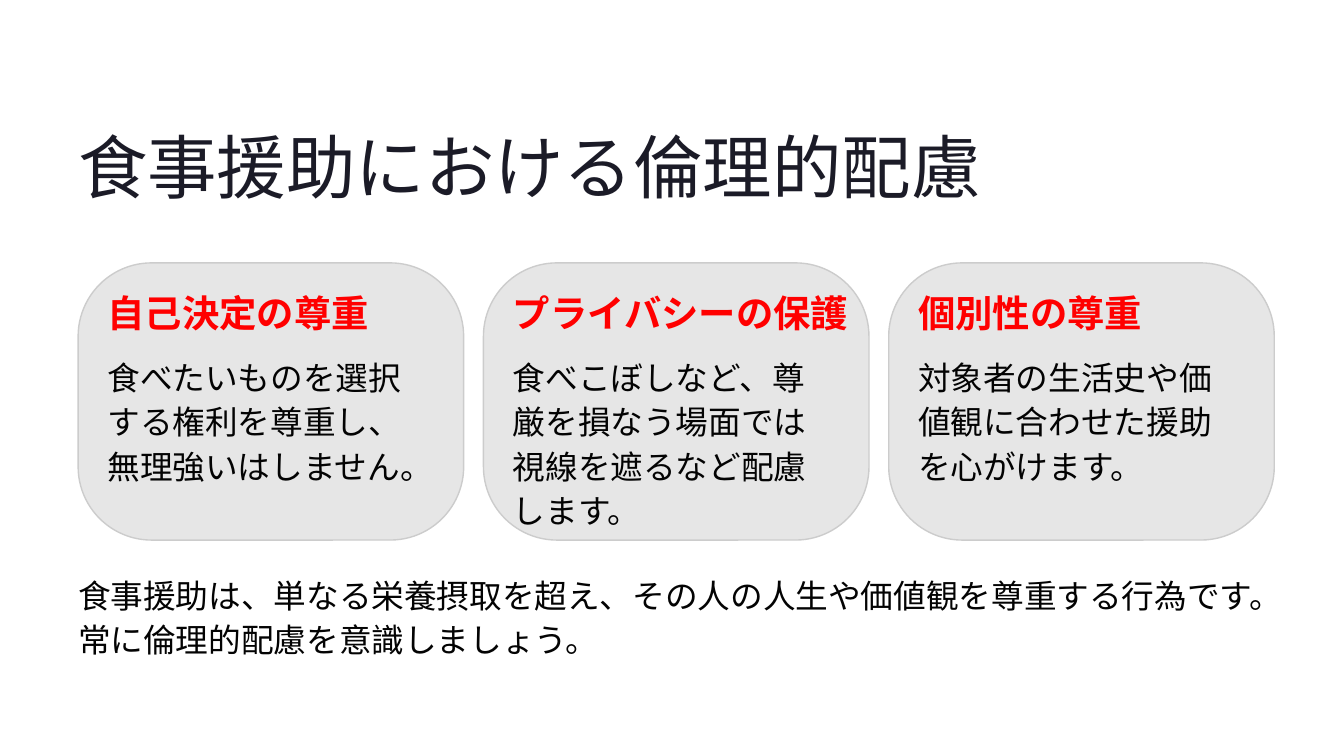
"""Build a slide on ethical care in meal assistance with three principle cards."""
import pptx
import pptx.dml.color
import pptx.enum.shapes
import pptx.util
from dataclasses import dataclass

TITLE = "食事援助における倫理的配慮"
CARDS = [
    ("自己決定の尊重", "食べたいものを選択する権利を尊重し、無理強いはしません。"),
    ("プライバシーの保護", "食べこぼしなど、尊厳を損なう場面では視線を遮るなど配慮します。"),
    ("個別性の尊重", "対象者の生活史や価値観に合わせた援助を心がけます。"),
]
SUMMARY = (
    "食事援助は、単なる栄養摂取を超え、その人の人生や価値観を尊重する行為です。"
    "常に倫理的配慮を意識しましょう。"
)


@dataclass(frozen=True)
class TextStyle:
    font: str
    size: float
    leading: float
    color: str
    bold: bool = False
    wrap: bool = False


class Theme:
    title = TextStyle("Inter", 59.5, 74.5, "1B1B27")
    heading = TextStyle("Inter", 32, 37, "FF0000", bold=True)
    body = TextStyle("Roboto", 28, 38, "030303", wrap=True)
    card_fill = "E6E6E6"
    card_line = "CCCCCC"
    line_width = 1.2


LEFT = 0.93
CARD_TOP, CARD_W, CARD_H = 3.13, 4.59, 3.3
CARDS_W = 14.24
CARD_RADIUS = 0.265
PAD = 0.35
HEADING_W, BODY_W = 4.15, 3.8
PITCH = (CARDS_W - CARD_W) / (len(CARDS) - 1)


def rgb(value):
    return pptx.dml.color.RGBColor.from_string(value)


def add_text(s, text, left, top, width, height, style):
    box = s.shapes.add_textbox(*map(pptx.util.Inches, (left, top, width, height)))
    tf = box.text_frame
    tf.word_wrap = style.wrap
    tf.margin_left = tf.margin_top = tf.margin_right = tf.margin_bottom = 0
    p = tf.paragraphs[0]
    p.text = text
    p.line_spacing = pptx.util.Pt(style.leading)
    p.font.name = style.font
    p.font.size = pptx.util.Pt(style.size)
    p.font.bold = style.bold
    p.font.color.rgb = rgb(style.color)


def add_card(s, heading, body, left):
    sp = s.shapes.add_shape(
        pptx.enum.shapes.MSO_SHAPE.ROUNDED_RECTANGLE,
        *map(pptx.util.Inches, (left, CARD_TOP, CARD_W, CARD_H)),
    )
    sp.adjustments[0] = CARD_RADIUS
    sp.shadow.inherit = False
    sp.fill.solid()
    sp.fill.fore_color.rgb = rgb(Theme.card_fill)
    sp.line.color.rgb = rgb(Theme.card_line)
    sp.line.width = pptx.util.Pt(Theme.line_width)
    add_text(s, heading, left + PAD, 3.48, HEADING_W, 0.52, Theme.heading)
    add_text(s, body, left + PAD, 4.2, BODY_W, 1.59, Theme.body)


def main():
    prs = pptx.Presentation()
    prs.slide_width = pptx.util.Inches(16)
    prs.slide_height = pptx.util.Inches(9)
    s = prs.slides.add_slide(prs.slide_layouts[6])
    add_text(s, TITLE, LEFT, 1.43, 10.77, 1.04, Theme.title)
    for i, (heading, body) in enumerate(CARDS):
        add_card(s, heading, body, LEFT + i * PITCH)
    add_text(s, SUMMARY, LEFT, 6.79, 14.14, 1.06, Theme.body)
    prs.save("out.pptx")


if __name__ == "__main__":
    main()
